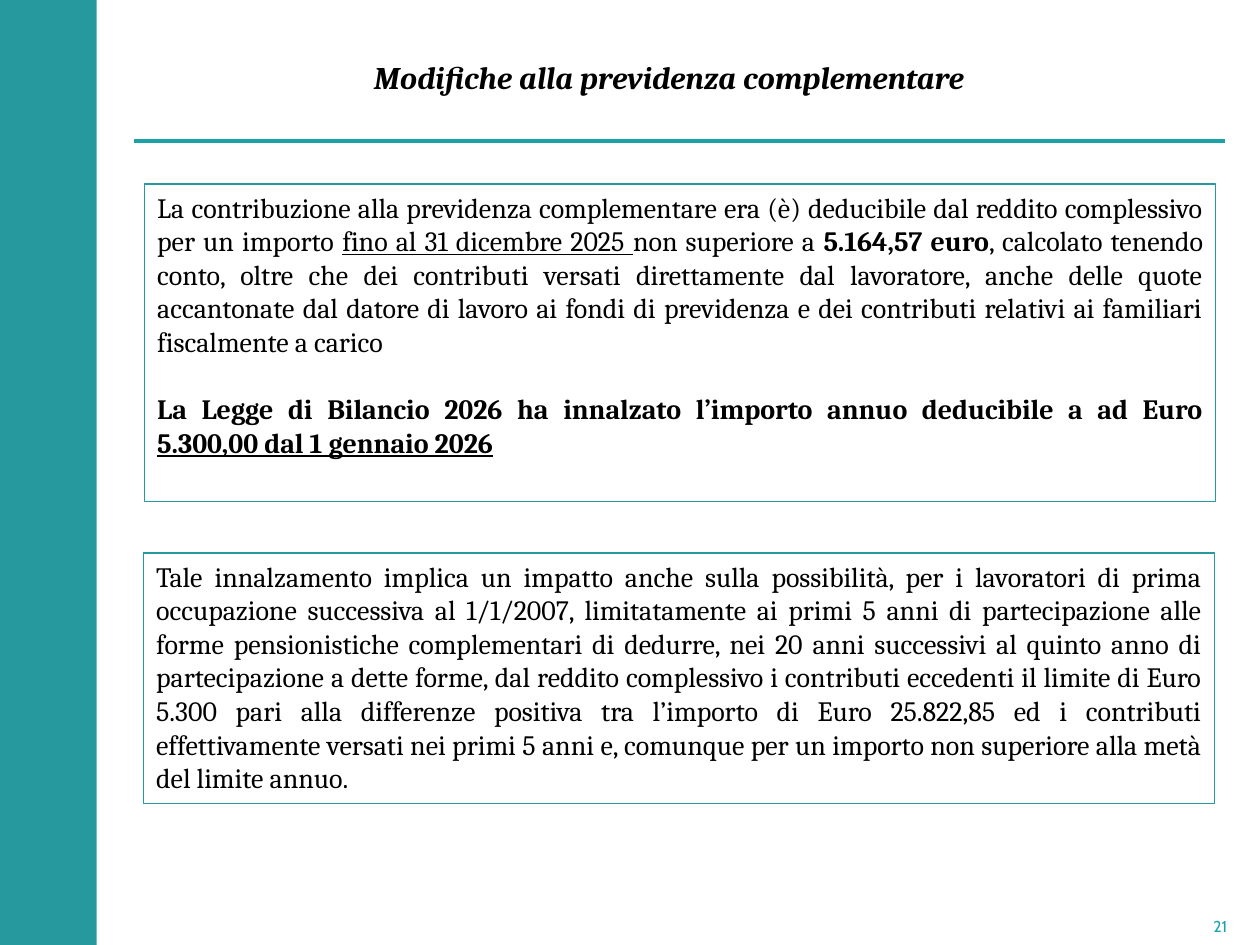
from lxml.etree import SubElement
from pptx import Presentation
from pptx.dml.color import RGBColor
from pptx.enum.shapes import MSO_CONNECTOR as Connector, MSO_SHAPE as Shape
from pptx.enum.text import MSO_ANCHOR as Anchor, PP_ALIGN as Align
from pptx.oxml.ns import qn
from pptx.util import Cm, Pt

TEAL = RGBColor(0x25, 0x99, 0x9D)
BRIGHT_TEAL = RGBColor(0x1B, 0xA2, 0xA7)
BLACK = RGBColor(0, 0, 0)

# Paragraphs are lists of (text, style); style letters: b = bold, u = underlined
DEDUCTION = [
    [("La contribuzione alla previdenza complementare era (è) deducibile dal "
      "reddito complessivo per un importo ", ""),
     ("fino al 31 dicembre 2025 ", "u"),
     ("non superiore a ", ""),
     ("5.164,57 euro", "b"),
     (", calcolato tenendo conto, oltre che dei contributi versati direttamente "
      "dal lavoratore, anche delle quote accantonate dal datore di lavoro ai "
      "fondi di previdenza e dei contributi relativi ai familiari fiscalmente "
      "a carico", "")],
    [("La Legge di Bilancio 2026 ha innalzato l’importo annuo deducibile a ad "
      "Euro ", "b"),
     ("5.300,00 dal 1 gennaio 2026", "bu")],
]
IMPACT = [
    [("Tale innalzamento implica un impatto anche sulla possibilità, per i "
      "lavoratori di prima occupazione successiva al 1/1/2007, limitatamente ai "
      "primi 5 anni di partecipazione alle forme pensionistiche complementari "
      "di dedurre, nei 20 anni successivi al quinto anno di partecipazione a "
      "dette forme, dal reddito complessivo i contributi eccedenti il limite di "
      "Euro 5.300 pari alla differenze positiva tra l’importo di Euro 25.822,85 "
      "ed i contributi effettivamente versati nei primi 5 anni e, comunque per "
      "un importo non superiore alla metà del limite annuo.", "")],
]


class SlideBuilder:
    """Holds the text style and the current slide."""

    def __init__(self, page, font="Cambria", size=16):
        self.page = page
        self.font = font
        self.size = size

    def rectangle(self, left, top, width, height):
        box = self.page.shapes.add_shape(
            Shape.RECTANGLE, Cm(left), Cm(top), Cm(width), Cm(height))
        box.shadow.inherit = False
        return box

    def band(self, left, top, width, height, color):
        band = self.rectangle(left, top, width, height)
        band.fill.solid()
        band.fill.fore_color.rgb = color
        band.line.fill.background()

    def rule(self, left, right, top, color, weight):
        rule = self.page.shapes.add_connector(
            Connector.STRAIGHT, Cm(left), Cm(top), Cm(right), Cm(top))
        rule.line.color.rgb = color
        rule.line.width = Pt(weight)
        SubElement(rule._element.spPr, qn("a:effectLst"))

    def label(self, left, top, width, height, text, size, color,
              font=None, anchor=Anchor.MIDDLE, emphasis=False):
        box = self.page.shapes.add_textbox(
            Cm(left), Cm(top), Cm(width), Cm(height))
        frame = box.text_frame
        frame.word_wrap = True
        frame.vertical_anchor = anchor
        frame.text = text
        para = frame.paragraphs[0]
        para.alignment = Align.CENTER
        para.font.name = font or self.font
        para.font.size = Pt(size)
        para.font.color.rgb = color
        para.font.bold = para.font.italic = emphasis
        return frame

    def framed_text(self, left, top, width, height, paragraphs):
        box = self.rectangle(left, top, width, height)
        box.fill.background()
        box.line.color.rgb = TEAL
        box.line.width = Pt(0.75)
        frame = box.text_frame
        frame.word_wrap = True
        frame.vertical_anchor = Anchor.TOP
        for index, spans in enumerate(paragraphs):
            para = frame.add_paragraph() if index else frame.paragraphs[0]
            para.alignment = Align.JUSTIFY
            if index:
                para.space_before = Pt(19.2)
            for text, style in spans:
                span = para.add_run()
                span.text = text
                span.font.name = self.font
                span.font.size = Pt(self.size)
                span.font.color.rgb = BLACK
                span.font.bold = "b" in style
                span.font.underline = "u" in style


def main():
    deck = Presentation()
    deck.slide_width, deck.slide_height = Cm(25.4), Cm(19.05)
    builder = SlideBuilder(deck.slides.add_slide(deck.slide_layouts[6]))

    # Side band
    builder.band(0, 0, 1.95, 19.05, TEAL)

    # Title and rule
    title = builder.label(1.88, 0.94, 23.5, 1.96,
                          "Modifiche alla previdenza complementare",
                          18, BLACK, anchor=Anchor.TOP, emphasis=True)
    title.margin_top = Cm(0.24)
    title.margin_right = Cm(0.53)
    builder.rule(2.7, 24.69, 2.84, BRIGHT_TEAL, 2.25)

    # Framed texts
    builder.framed_text(2.92, 3.71, 21.59, 6.4, DEDUCTION)
    builder.framed_text(2.9, 11.15, 21.59, 5.05, IMPACT)

    # Page number
    builder.label(23.8, 18.29, 1.6, 0.76, "21", 9, BRIGHT_TEAL, font="Cabin")

    deck.save("out.pptx")


if __name__ == "__main__":
    main()
